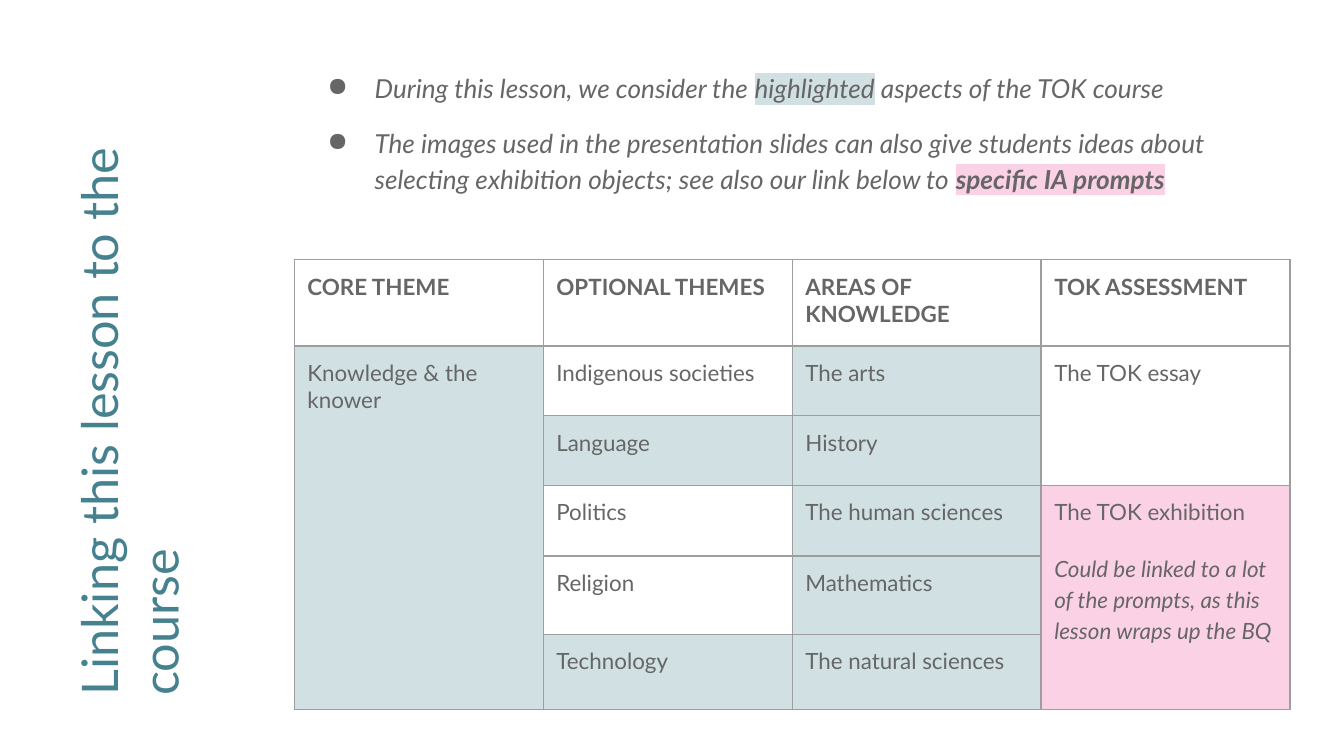
import pptx
import pptx.util
import pptx.dml.color
import pptx.enum.text
import pptx.oxml
import pptx.oxml.ns
from dataclasses import dataclass
from lxml import etree

Cm, Pt = pptx.util.Cm, pptx.util.Pt
qn = pptx.oxml.ns.qn


@dataclass(frozen=True)
class Theme:
    font: str = "Lato"
    title: str = "45818E"
    text: str = "666666"
    blue: str = "D0E0E3"
    pink: str = "FBD1E6"
    white: str = "FFFFFF"
    line: str = "9E9E9E"
    big: int = 27
    body: int = 14
    small: int = 12
    rule: float = 0.75
    pad: float = 0.25


theme = Theme()

# Rows of the table; a cell is (text, fill), and None continues the cell above
HEADS = ["CORE THEME", "OPTIONAL THEMES", "AREAS OF KNOWLEDGE", "TOK ASSESSMENT"]
ROWS = [
    [(head, theme.white) for head in HEADS],
    [("Knowledge & the knower", theme.blue), ("Indigenous societies", None),
     ("The arts", theme.blue), ("The TOK essay", None)],
    [None, ("Language", theme.blue), ("History", theme.blue), None],
    [None, ("Politics", None), ("The human sciences", theme.blue),
     ("The TOK exhibition", theme.pink)],
    [None, ("Religion", None), ("Mathematics", theme.blue), None],
    [None, ("Technology", theme.blue), ("The natural sciences", theme.blue), None],
]
HIGHS = [1.63, 1.32, 1.31, 1.34, 1.48, 1.42]
NOTE = "Could be linked to a lot of the prompts, as this lesson wraps up the BQ"


def rgb(code):
    return pptx.dml.color.RGBColor.from_string(code)


def write(para, text, size=theme.small, color=theme.text, bold=False,
          italic=False, mark=None):
    """Add a run of text to a paragraph."""
    run = para.add_run()
    run.text = text
    font = run.font
    font.size, font.bold, font.italic = Pt(size), bold, italic
    font.color.rgb = rgb(color)
    if mark:
        high = etree.SubElement(run._r.get_or_add_rPr(), qn("a:highlight"))
        etree.SubElement(high, qn("a:srgbClr"), val=mark)
    font.name = theme.font


def setup(frame):
    """Give a text frame its margins, wrapping and top anchor."""
    frame.word_wrap = True
    frame.auto_size = pptx.enum.text.MSO_AUTO_SIZE.NONE
    frame.vertical_anchor = pptx.enum.text.MSO_ANCHOR.TOP
    frame.margin_left = frame.margin_right = Cm(theme.pad)
    frame.margin_top = frame.margin_bottom = Cm(theme.pad)


def bullet(para):
    """Add a hanging round bullet."""
    props = para._p.get_or_add_pPr()
    props.set("marL", str(Cm(1.27)))
    props.set("indent", str(Cm(-0.89)))
    tint = etree.SubElement(props, qn("a:buClr"))
    etree.SubElement(tint, qn("a:srgbClr"), val=theme.text)
    etree.SubElement(props, qn("a:buChar"), char="●")


def border(cell):
    """Draw a thin line on all four sides of a cell."""
    props = cell._tc.get_or_add_tcPr()
    for side in ("a:lnL", "a:lnR", "a:lnT", "a:lnB"):
        line = etree.SubElement(props, qn(side), w=str(Pt(theme.rule)))
        fill = etree.SubElement(line, qn("a:solidFill"))
        etree.SubElement(fill, qn("a:srgbClr"), val=theme.line)


def add_title(slide, x, y, wide, high):
    """Turn the title to read upwards within its box."""
    title = slide.shapes.title
    title.left, title.top = Cm(x + (wide - high) / 2), Cm(y + (high - wide) / 2)
    title.width, title.height = Cm(high), Cm(wide)
    title.rotation = 270
    setup(title.text_frame)
    para = title.text_frame.paragraphs[0]
    para.alignment = pptx.enum.text.PP_ALIGN.LEFT
    para.line_spacing = 1.0
    write(para, "Linking this lesson to the course", size=theme.big, color=theme.title)


def add_points(slide, x, y, wide, high):
    """Place the two bullet points."""
    points = [
        [("During this lesson, we consider the ", {}),
         ("highlighted", {"mark": theme.blue}),
         (" aspects of the TOK course", {})],
        [("The images used in the presentation slides can also give students ideas "
          "about selecting exhibition objects; see also our link below to ", {}),
         ("specific IA prompts", {"mark": theme.pink, "bold": True})],
    ]
    frame = slide.shapes.add_textbox(Cm(x), Cm(y), Cm(wide), Cm(high)).text_frame
    setup(frame)
    for i, runs in enumerate(points):
        para = frame.add_paragraph() if i else frame.paragraphs[0]
        para.line_spacing = 1.15
        if i:
            para.space_before = para.space_after = Pt(10)
        bullet(para)
        for text, style in runs:
            write(para, text, size=theme.body, italic=True, **style)


def add_grid(slide, x, y, wide):
    """Place the course table, merging cells that run downwards."""
    count = len(HEADS)
    grid = slide.shapes.add_table(len(ROWS), count, Cm(x), Cm(y), Cm(wide),
                                  Cm(sum(HIGHS))).table
    grid.first_row = grid.horz_banding = False
    for col in grid.columns:
        col.width = Cm(wide / count)
    for r, row in enumerate(ROWS):
        grid.rows[r].height = Cm(HIGHS[r])
        for c, item in enumerate(row):
            cell = grid.cell(r, c)
            border(cell)
            if item is None:
                cell.fill.background()
                continue
            text, fill = item
            cell.margin_left = cell.margin_right = Cm(theme.pad)
            cell.margin_top = cell.margin_bottom = Cm(theme.pad)
            if fill:
                cell.fill.solid()
                cell.fill.fore_color.rgb = rgb(fill)
            else:
                cell.fill.background()
            write(cell.text_frame.paragraphs[0], text, bold=r == 0)
            last = r
            while last + 1 < len(ROWS) and ROWS[last + 1][c] is None:
                last += 1
            if last > r:
                cell.merge(grid.cell(last, c))

    # Remark under the exhibition
    para = grid.cell(3, 3).text_frame.add_paragraph()
    para.space_before = Pt(14)
    para.line_spacing = 1.15
    write(para, NOTE, italic=True)


def main():
    deck = pptx.Presentation()
    deck.slide_width, deck.slide_height = Cm(25.4), Cm(14.29)
    slide = deck.slides.add_slide(deck.slide_layouts[5])
    add_title(slide, 1.03, 1.03, 3.61, 12.37)
    add_points(slide, 5.56, 1.04, 18.97, 3.1)
    add_grid(slide, 5.56, 4.91, 18.82)
    deck.save("out.pptx")


if __name__ == "__main__":
    main()
